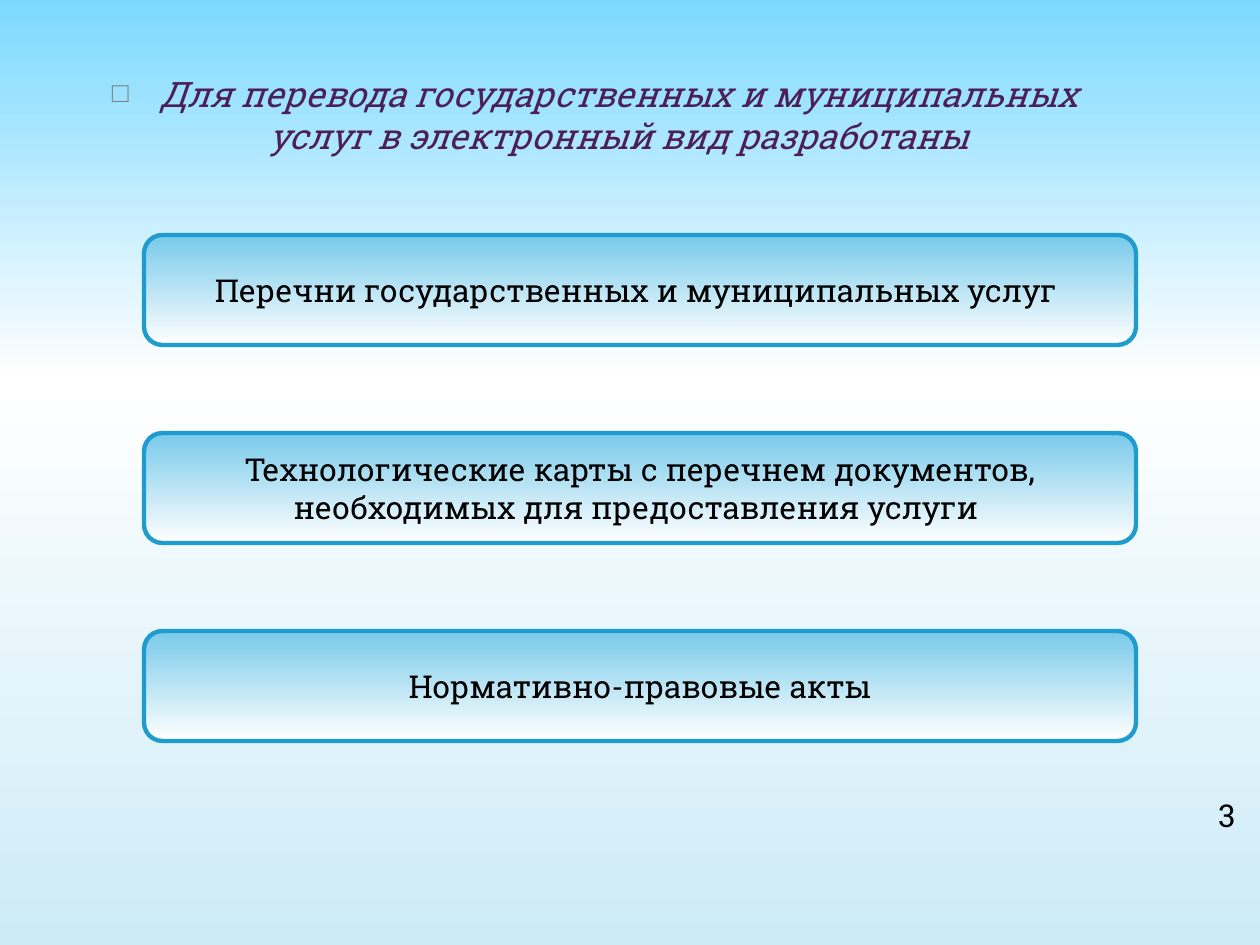
from copy import deepcopy

from lxml import etree
from pptx import Presentation
from pptx.dml.color import RGBColor
from pptx.enum.shapes import MSO_SHAPE
from pptx.enum.text import MSO_ANCHOR, MSO_AUTO_SIZE, PP_ALIGN
from pptx.oxml.ns import qn
from pptx.util import Pt

ROUND = MSO_SHAPE.ROUNDED_RECTANGLE
MIDDLE, TOP = MSO_ANCHOR.MIDDLE, MSO_ANCHOR.TOP
CENTER, LEFT = PP_ALIGN.CENTER, PP_ALIGN.LEFT
NO_FIT = MSO_AUTO_SIZE.NONE

# Content (the trailing spaces shift the centred lines)
LEAD = "Для перевода государственных и муниципальных услуг в электронный вид разработаны"
ITEMS = [
    "Перечни государственных и муниципальных услуг ",
    "Технологические карты с перечнем документов, необходимых для предоставления услуги ",
    "Нормативно-правовые акты",
]
NUMBER = "3"

THEME = {
    "font": "Roboto Slab",
    "lead": "4C1F58",
    "text": "000000",
    "bullet": "808080",
    "line": "1F9BCD",
    "box": [(0, "78CAEA"), (1, "FFFFFF")],
    "back": [(0, "CDEBF7"), (0.6, "FFFFFF"), (1, "7CD9FF")],
    "lead_size": 20,
    "size": 18,
}

# Layout in px
LEAD_AT = (64, 66, 1062, 118)
NUMBER_AT = (1206, 790, 59, 29)
BOX_X, BOX_Y, BOX_W, BOX_H, STEP = 144, 235, 992, 110, 198
INDENT = 48


def px(n):
    return round(n * 914400 / 126)


def place(shape, spot):
    shape.left, shape.top, shape.width, shape.height = map(px, spot)


def blend(fill, root, stops, angle):
    """Fill with a linear gradient of any number of stops."""
    fill.gradient()
    fill.gradient_angle = angle
    marks = next(root.iter(qn("a:gsLst")))
    while len(marks) < len(stops):
        marks.append(deepcopy(marks[0]))
    for stop, (pos, tone) in zip(fill.gradient_stops, stops):
        stop.position = pos
        stop.color.rgb = RGBColor.from_string(tone)


def write(shape, text, size, tone, align, anchor):
    frame = shape.text_frame
    frame.text = text
    frame.word_wrap = True
    frame.auto_size = NO_FIT
    frame.vertical_anchor = anchor
    para = frame.paragraphs[0]
    para.alignment = align
    font = para.runs[0].font
    font.name, font.size = THEME["font"], Pt(size)
    font.color.rgb = RGBColor.from_string(tone)
    return para


def add_bullet(para):
    props = para._p.get_or_add_pPr()
    props.set("marL", str(px(INDENT)))
    props.set("indent", str(-px(INDENT)))
    tint = etree.SubElement(props, qn("a:buClr"))
    etree.SubElement(tint, qn("a:srgbClr"), val=THEME["bullet"])
    etree.SubElement(props, qn("a:buSzPct"), val="80000")
    etree.SubElement(props, qn("a:buChar"), char="□")


def main():
    deck = Presentation()
    deck.slide_width, deck.slide_height = px(1260), px(945)
    slide = deck.slides.add_slide(deck.slide_layouts[1])
    title = slide.shapes.title.element
    title.getparent().remove(title)
    blend(slide.background.fill, slide.element, THEME["back"], 90)

    # Lead line
    body = slide.placeholders[1]
    place(body, LEAD_AT)
    para = write(body, LEAD, THEME["lead_size"], THEME["lead"], CENTER, TOP)
    para.runs[0].font.italic = True
    para.space_before = Pt(15)
    add_bullet(para)

    # Item boxes
    for i, item in enumerate(ITEMS):
        box = slide.shapes.add_shape(ROUND, 0, 0, 0, 0)
        place(box, (BOX_X, BOX_Y + i * STEP, BOX_W, BOX_H))
        box.shadow.inherit = False
        blend(box.fill, box.element, THEME["box"], 270)
        box.line.color.rgb = RGBColor.from_string(THEME["line"])
        box.line.width = Pt(2.5)
        write(box, item, THEME["size"], THEME["text"], CENTER, MIDDLE)

    # Page number
    page = slide.shapes.add_textbox(0, 0, 0, 0)
    place(page, NUMBER_AT)
    write(page, NUMBER, THEME["size"], THEME["text"], LEFT, TOP)

    deck.save("out.pptx")


if __name__ == "__main__":
    main()
